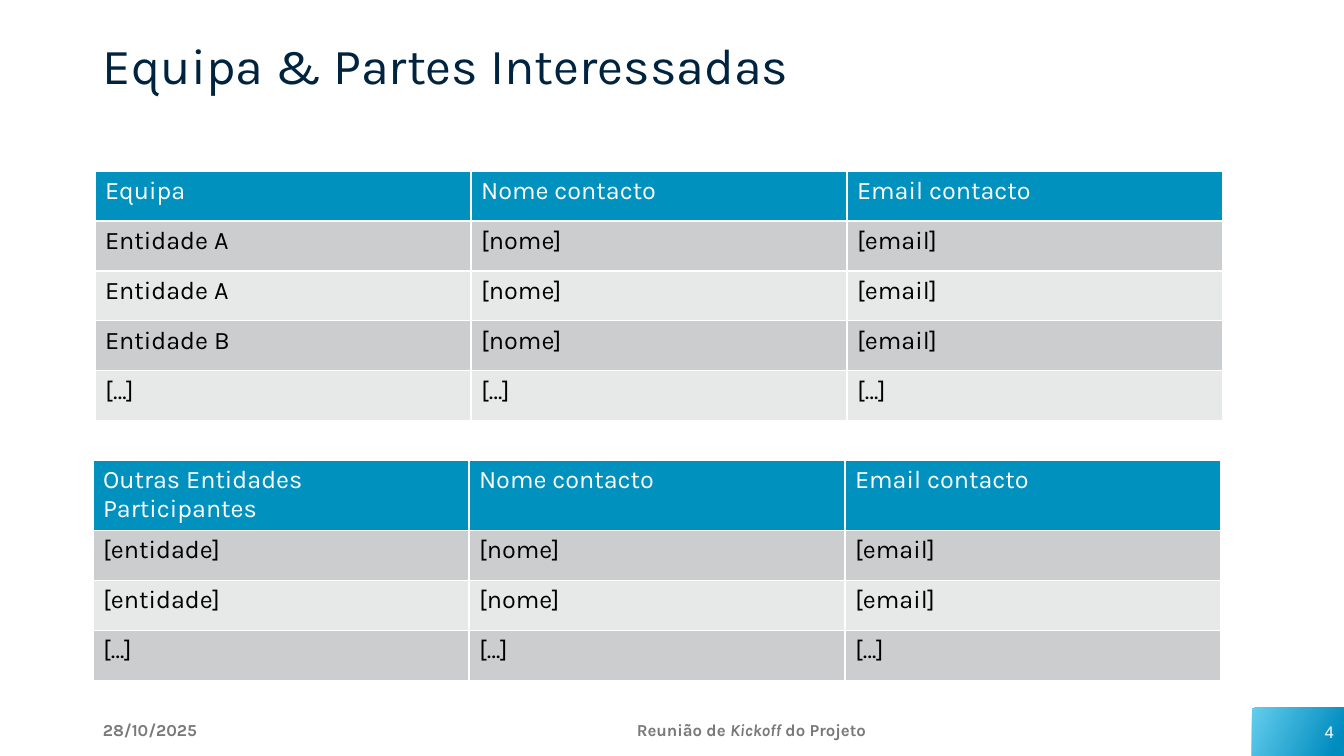
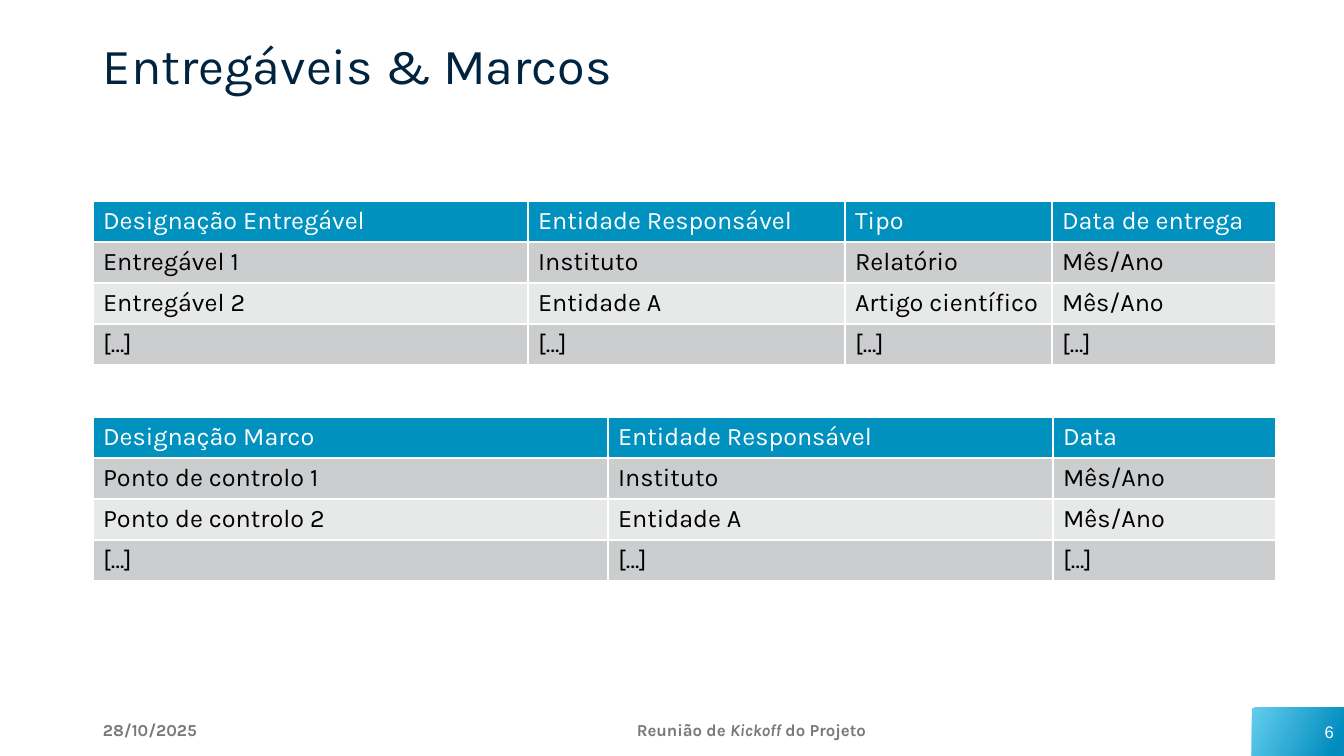
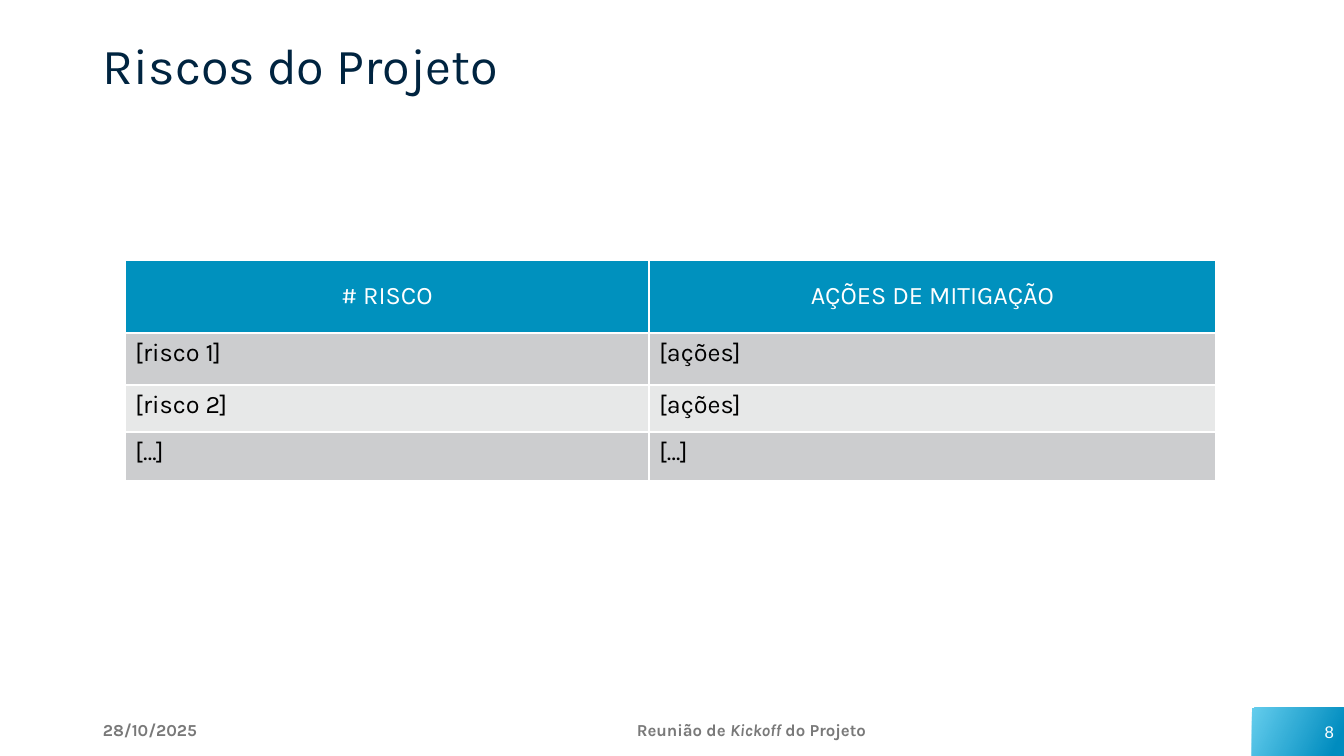
from dataclasses import dataclass

from lxml import etree
from pptx import Presentation
from pptx import util as u
from pptx.dml.color import RGBColor
from pptx.enum import shapes, text
from pptx.oxml.ns import qn

SLIDE_W, SLIDE_H = 1344, 756
EMU_PER_PX = 12192000 / SLIDE_W


@dataclass(frozen=True)
class Theme:
    font: str = "Karla"
    number_font: str = "Arial"
    title: str = "002440"
    footer: str = "797979"
    header: str = "0091BE"
    bands: tuple[str, str] = ("CCCDCF", "E7E8E8")
    body: str = "000000"
    white: str = "FFFFFF"
    badge_light: str = "64CDED"
    badge_dark: str = "008CBF"
    title_pt: int = 36
    table_pt: int = 18
    footer_pt: int = 12
    border_pt: int = 1


@dataclass(frozen=True)
class Grid:
    left: int
    top: int
    columns: tuple[int, ...]
    heights: tuple[int, ...]
    rows: tuple[tuple[str, ...], ...]
    centred_header: bool = False


@dataclass(frozen=True)
class Page:
    number: int
    title: str
    grids: tuple[Grid, ...]


THEME = Theme()
DATE = "28/10/2025"
FOOTER = (("Reunião de ", False), ("Kickoff", True), (" do Projeto", False))
MORE = "[…]"
CONTACT = ("[nome]", "[email]")
CONTACT_HEADER = ("Nome contacto", "Email contacto")
CONTACT_COLUMNS = (376,) * 3
MONTH = "Mês/Ano"
LEAD = "Instituto"

PAGES = (
    Page(4, "Equipa & Partes Interessadas", (
        Grid(95, 171, CONTACT_COLUMNS, (50,) * 5, (
            ("Equipa", *CONTACT_HEADER),
            ("Entidade A", *CONTACT),
            ("Entidade A", *CONTACT),
            ("Entidade B", *CONTACT),
            (MORE,) * 3)),
        Grid(93, 460, CONTACT_COLUMNS, (50,) * 4, (
            ("Outras Entidades Participantes", *CONTACT_HEADER),
            ("[entidade]", *CONTACT),
            ("[entidade]", *CONTACT),
            (MORE,) * 3)))),
    Page(6, "Entregáveis & Marcos", (
        Grid(93, 201, (435, 317, 207, 224), (41,) * 4, (
            ("Designação Entregável", "Entidade Responsável", "Tipo", "Data de entrega"),
            ("Entregável 1", LEAD, "Relatório", MONTH),
            ("Entregável 2", "Entidade A", "Artigo científico", MONTH),
            (MORE,) * 4)),
        Grid(93, 417, (515, 445, 223), (41,) * 4, (
            ("Designação Marco", "Entidade Responsável", "Data"),
            ("Ponto de controlo 1", LEAD, MONTH),
            ("Ponto de controlo 2", "Entidade A", MONTH),
            (MORE,) * 3)))),
    Page(8, "Riscos do Projeto", (
        Grid(125, 260, (524, 567), (73, 52, 47, 49), (
            ("# RISCO", "AÇÕES DE MITIGAÇÃO"),
            ("[risco 1]", "[ações]"),
            ("[risco 2]", "[ações]"),
            (MORE,) * 2), centred_header=True),)),
)


def px(length: int) -> u.Emu:
    return u.Emu(round(length * EMU_PER_PX))


def style_font(font, size: int, colour: str, bold: bool = False, name: str = THEME.font) -> None:
    font.name, font.size, font.bold = name, u.Pt(size), bold
    font.color.rgb = RGBColor.from_string(colour)


def add_text_box(slide, left: int, top: int, width: int, height: int, anchor):
    """Add a wrapping text box and return its first paragraph."""
    frame = slide.shapes.add_textbox(px(left), px(top), px(width), px(height)).text_frame
    frame.word_wrap = True
    frame.vertical_anchor = anchor
    return frame.paragraphs[0]


def add_badge(slide, number: int) -> None:
    badge = slide.shapes.add_shape(
        shapes.MSO_SHAPE.RECTANGLE, px(1252), px(708), px(92), px(48))
    badge.shadow.inherit = False
    badge.line.fill.background()
    badge.fill.gradient()
    badge.fill.gradient_angle = 335
    stops = ((0, THEME.badge_light), (0.9, THEME.badge_dark))
    for stop, (position, colour) in zip(badge.fill.gradient_stops, stops):
        stop.position = position
        stop.color.rgb = RGBColor.from_string(colour)
    frame = badge.text_frame
    frame.vertical_anchor = text.MSO_ANCHOR.MIDDLE
    frame.text = str(number)
    paragraph = frame.paragraphs[0]
    paragraph.alignment = text.PP_ALIGN.RIGHT
    style_font(paragraph.runs[0].font, THEME.footer_pt, THEME.white, name=THEME.number_font)


def add_title(slide, title: str) -> None:
    paragraph = add_text_box(slide, 93, 36, 1159, 146, text.MSO_ANCHOR.TOP)
    paragraph.text = title
    paragraph.line_spacing = 0.9
    style_font(paragraph.runs[0].font, THEME.title_pt, THEME.title)


def add_footer(slide) -> None:
    date = add_text_box(slide, 93, 710, 302, 35, text.MSO_ANCHOR.BOTTOM)
    date.text = DATE
    meeting = add_text_box(slide, 447, 710, 429, 35, text.MSO_ANCHOR.BOTTOM)
    meeting.alignment = text.PP_ALIGN.RIGHT
    for words, italic in FOOTER:
        run = meeting.add_run()
        run.text = words
        run.font.italic = italic
    for run in (*date.runs, *meeting.runs):
        style_font(run.font, THEME.footer_pt, THEME.footer, bold=True)


def add_borders(cell) -> None:
    properties = cell._tc.get_or_add_tcPr()
    for side in ("lnL", "lnR", "lnT", "lnB"):
        line = etree.SubElement(properties, qn(f"a:{side}"), w=str(u.Pt(THEME.border_pt)))
        fill = etree.SubElement(line, qn("a:solidFill"))
        etree.SubElement(fill, qn("a:srgbClr"), val=THEME.white)


def fill_cell(cell, words: str, background: str, colour: str) -> None:
    add_borders(cell)
    cell.fill.solid()
    cell.fill.fore_color.rgb = RGBColor.from_string(background)
    cell.text_frame.text = words
    style_font(cell.text_frame.paragraphs[0].runs[0].font, THEME.table_pt, colour)


def add_grid(slide, grid: Grid) -> None:
    table = slide.shapes.add_table(
        len(grid.rows), len(grid.columns), px(grid.left), px(grid.top),
        px(sum(grid.columns)), px(sum(grid.heights))).table
    for column, width in zip(table.columns, grid.columns):
        column.width = px(width)
    for index, (row, height, entries) in enumerate(zip(table.rows, grid.heights, grid.rows)):
        row.height = px(height)
        is_header = index == 0
        background = THEME.header if is_header else THEME.bands[(index - 1) % 2]
        for cell, words in zip(row.cells, entries):
            fill_cell(cell, words, background, THEME.white if is_header else THEME.body)
            if is_header and grid.centred_header:
                cell.vertical_anchor = text.MSO_ANCHOR.MIDDLE
                cell.text_frame.paragraphs[0].alignment = text.PP_ALIGN.CENTER


def main() -> None:
    deck = Presentation()
    deck.slide_width, deck.slide_height = px(SLIDE_W), px(SLIDE_H)
    blank = deck.slide_layouts[6]
    for page in PAGES:
        slide = deck.slides.add_slide(blank)
        add_badge(slide, page.number)
        add_title(slide, page.title)
        add_footer(slide)
        for grid in page.grids:
            add_grid(slide, grid)
    deck.save("out.pptx")


if __name__ == "__main__":
    main()
